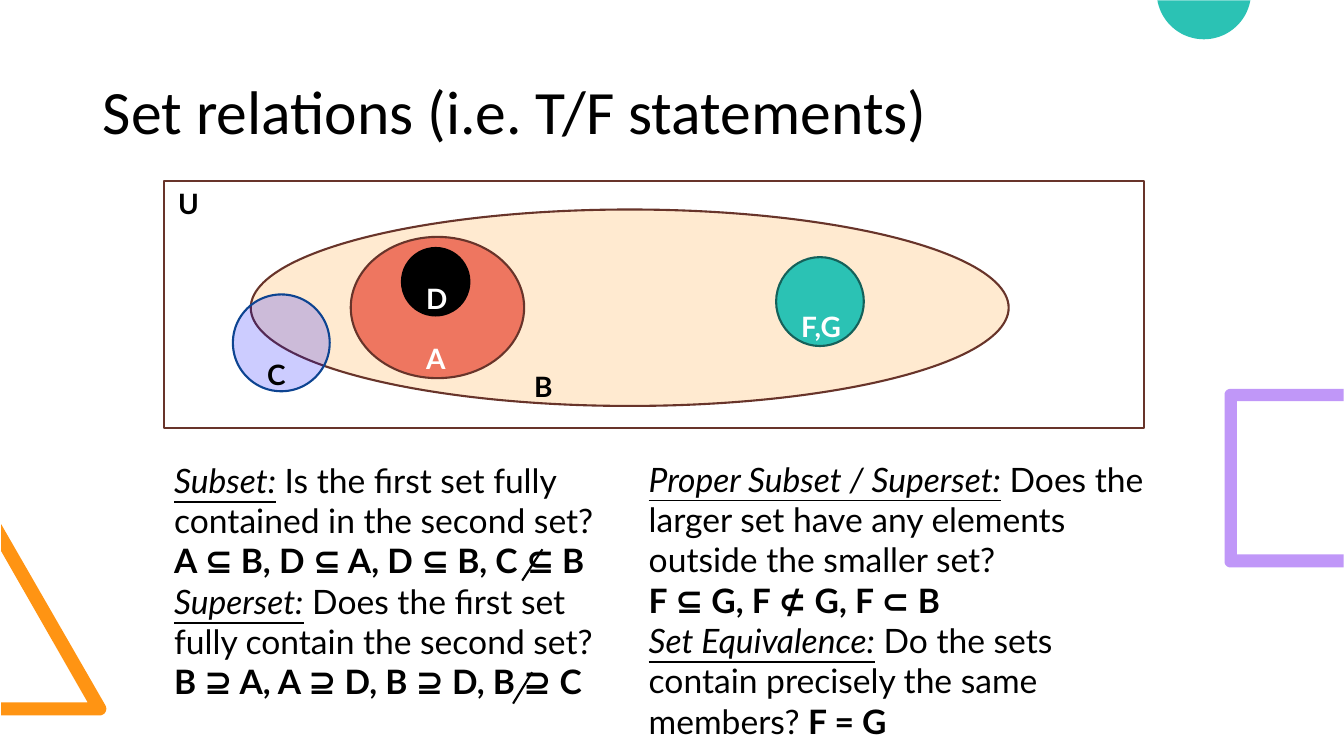
from math import cos, radians, sin

from lxml import etree
from pptx import Presentation
from pptx.dml.color import RGBColor
from pptx.enum.shapes import MSO_CONNECTOR, MSO_SHAPE
from pptx.enum.text import MSO_ANCHOR, MSO_AUTO_SIZE, PP_ALIGN
from pptx.oxml.ns import qn
from pptx.util import Cm, Pt

RECTANGLE, ELLIPSE = MSO_SHAPE.RECTANGLE, MSO_SHAPE.OVAL
STRAIGHT = MSO_CONNECTOR.STRAIGHT
MIDDLE, LEFT = MSO_ANCHOR.MIDDLE, PP_ALIGN.LEFT
NO_FIT, GROW = MSO_AUTO_SIZE.NONE, MSO_AUTO_SIZE.SHAPE_TO_FIT_TEXT
TITLE_ONLY = 5

BLACK, WHITE, BROWN, TEAL = "000000", "FFFFFF", "68342A", "2BC2B4"
ORANGE, PURPLE = "FF9413", "C097F8"

# Text styles of the definitions: a term, its question, and examples
TERM, PLAIN, EXAMPLE = "term", "plain", "example"

SUBSETS = [
    [("Subset:", TERM),
     (" Is the first set fully contained in the second set?", PLAIN)],
    [("A ⊆ B, D ⊆ A, D ⊆ B, C ⊆ B", EXAMPLE)],
    [("Superset:", TERM),
     (" Does the first set fully contain the second set?", PLAIN)],
    [("B ⊇ A, A ⊇ D, B ⊇ D, B ⊇ C", EXAMPLE)],
]
PROPER_SUBSETS = [
    [("Proper Subset / Superset:", TERM),
     (" Does the larger set have any elements outside the smaller set?", PLAIN)],
    [("F ⊆ G, F ⊄ G, F ⊂ B", EXAMPLE)],
    [("Set Equivalence:", TERM),
     (" Do the sets contain precisely the same members? ", PLAIN),
     ("F = G", EXAMPLE)],
]


def rgb(colour):
    return RGBColor.from_string(colour)


def cms(*lengths):
    return [Cm(length) for length in lengths]


def style_font(font, size, name, colour):
    font.size, font.name = Pt(size), name
    font.color.rgb = rgb(colour)


def arc(centre_x, centre_y, radius, start, end, steps=12):
    """Points along a circle, in degrees clockwise from the right."""
    angles = [radians(start + (end - start) * i / steps) for i in range(steps + 1)]
    return [(centre_x + radius * cos(a), centre_y + radius * sin(a)) for a in angles]


def add_ornament(slide, points, colour):
    corners = [cms(x, y) for x, y in points]
    builder = slide.shapes.build_freeform(*corners[0])
    builder.add_line_segments(corners[1:])
    ornament = builder.convert_to_shape()
    ornament.shadow.inherit = False
    ornament.fill.solid()
    ornament.fill.fore_color.rgb = rgb(colour)
    ornament.line.fill.background()


def add_set(slide, kind, box, outline, colour=None, opacity=100):
    region = slide.shapes.add_shape(kind, *cms(*box))
    region.shadow.inherit = False
    region.line.color.rgb = rgb(outline)
    region.line.width = Pt(1.5)
    if colour is None:
        region.fill.background()
        return
    region.fill.solid()
    region.fill.fore_color.rgb = rgb(colour)
    if opacity < 100:
        shade = region.fill._xPr.find(".//" + qn("a:srgbClr"))
        etree.SubElement(shade, qn("a:alpha"), val=str(opacity * 1000))


def add_text_frame(shapes, box):
    frame = shapes.add_textbox(*cms(*box)).text_frame
    frame.word_wrap = True
    frame.auto_size = GROW
    return frame


def add_set_label(slide, name, left, top, colour, width=0.99):
    frame = add_text_frame(slide.shapes, (left, top, width, 1.12))
    frame.text = name
    font = frame.paragraphs[0].runs[0].font
    style_font(font, 20, "Lato", colour)
    font.bold = True


def add_definitions(shapes, box, definitions):
    frame = add_text_frame(shapes, box)
    for i, parts in enumerate(definitions):
        paragraph = frame.add_paragraph() if i else frame.paragraphs[0]
        for words, style in parts:
            run = paragraph.add_run()
            run.text = words
            style_font(run.font, 24, "Lato", BLACK)
            run.font.italic = run.font.underline = style == TERM
            run.font.bold = style == EXAMPLE


def add_strike(shapes, right, top, left, bottom):
    strike = shapes.add_connector(STRAIGHT, *cms(right, top, left, bottom))
    strike.line.color.rgb = rgb(BLACK)
    strike.line.width = Pt(1.5)
    etree.SubElement(strike._element.spPr, qn("a:effectLst"))


def add_ornaments(slide):
    add_ornament(slide, [(0.03, 18.03), (0.03, 17.7), (2.21, 17.7), (0.03, 13.89),
                         (0.03, 13.21), *arc(2.51, 17.86, 0.17, -30, 90)], ORANGE)
    add_ornament(slide, arc(30.34, -0.2, 1.19, 10, 170, 60), TEAL)
    add_ornament(slide, [(33.86, 14.3), *arc(31.01, 14.15, 0.15, 90, 180),
                         *arc(31.01, 9.95, 0.15, 180, 270), (33.86, 9.8),
                         (33.86, 10.11), (31.17, 10.11), (31.17, 13.97),
                         (33.86, 13.97)], PURPLE)


def fill_title(slide, words):
    title = slide.shapes.title
    title.left, title.top, title.width, title.height = cms(2.34, 0.84, 29.21, 4.09)
    frame = title.text_frame
    frame.text = words
    frame.auto_size = NO_FIT
    frame.vertical_anchor = MIDDLE
    paragraph = frame.paragraphs[0]
    paragraph.alignment = LEFT
    paragraph.line_spacing = 0.9
    style_font(paragraph.runs[0].font, 44, "Calibri", BLACK)


def add_venn_diagram(slide):
    add_set(slide, RECTANGLE, (4.14, 4.57, 24.69, 6.22), BROWN)
    add_set(slide, ELLIPSE, (6.32, 5.28, 19.1, 4.95), BROWN, "FFEAD0")
    add_set(slide, ELLIPSE, (8.84, 5.97, 4.37, 3.56), BROWN, "EE7660")
    add_set(slide, ELLIPSE, (5.87, 7.42, 2.44, 2.44), "0D4491", "0000FF", 20)
    add_set(slide, ELLIPSE, (10.13, 6.25, 1.7, 1.7), BLACK, BLACK)
    add_set(slide, ELLIPSE, (19.56, 6.48, 2.21, 2.24), "15615A", TEAL)

    add_set_label(slide, "U", 4.24, 4.57, BLACK)
    add_set_label(slide, "B", 13.21, 9.19, BLACK)
    add_set_label(slide, "C", 6.48, 8.89, BLACK)
    add_set_label(slide, "A", 10.49, 8.48, WHITE)
    add_set_label(slide, "D", 10.49, 6.96, WHITE)
    add_set_label(slide, "F,G", 19.94, 7.67, WHITE, 1.6)


def main():
    deck = Presentation()
    deck.slide_width, deck.slide_height = cms(33.87, 19.05)
    slide = deck.slides.add_slide(deck.slide_layouts[TITLE_ONLY])

    add_ornaments(slide)
    fill_title(slide, "Set relations (i.e. T/F statements)")
    add_venn_diagram(slide)

    add_definitions(slide.shapes, (16.1, 11.43, 13.18, 8.46), PROPER_SUBSETS)
    struck_examples = slide.shapes.add_group_shape().shapes
    add_definitions(struck_examples, (4.14, 11.46, 11.58, 6.4), SUBSETS)
    add_strike(struck_examples, 13.67, 13.84, 13.16, 14.63)
    add_strike(struck_examples, 13.41, 16.94, 12.93, 17.73)

    deck.save("out.pptx")


if __name__ == "__main__":
    main()
